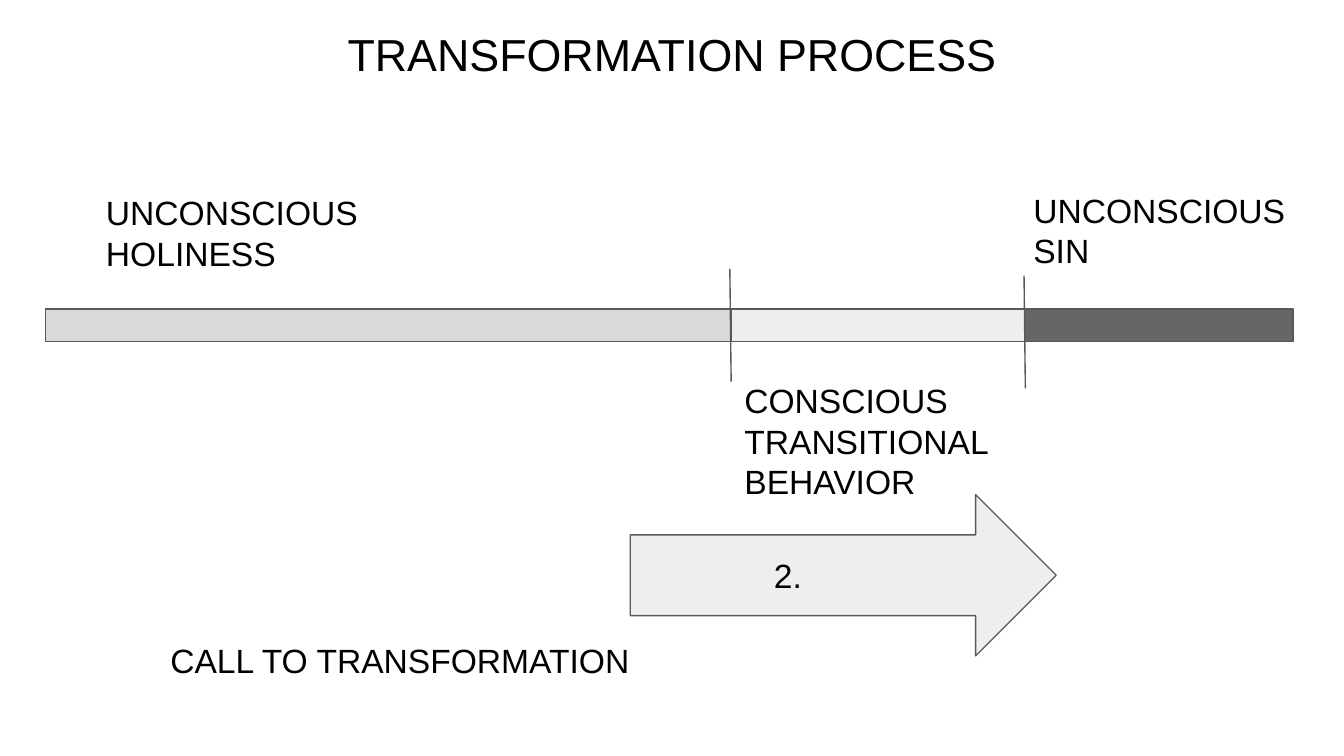
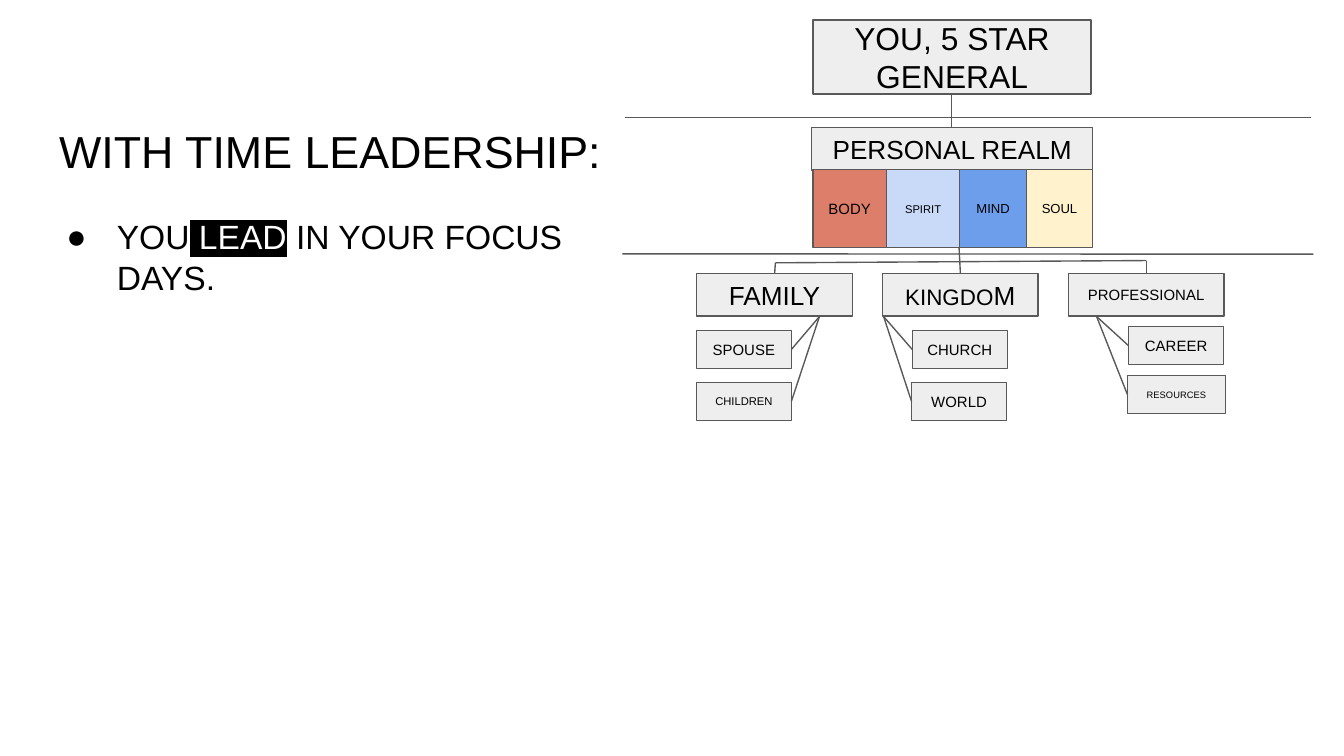
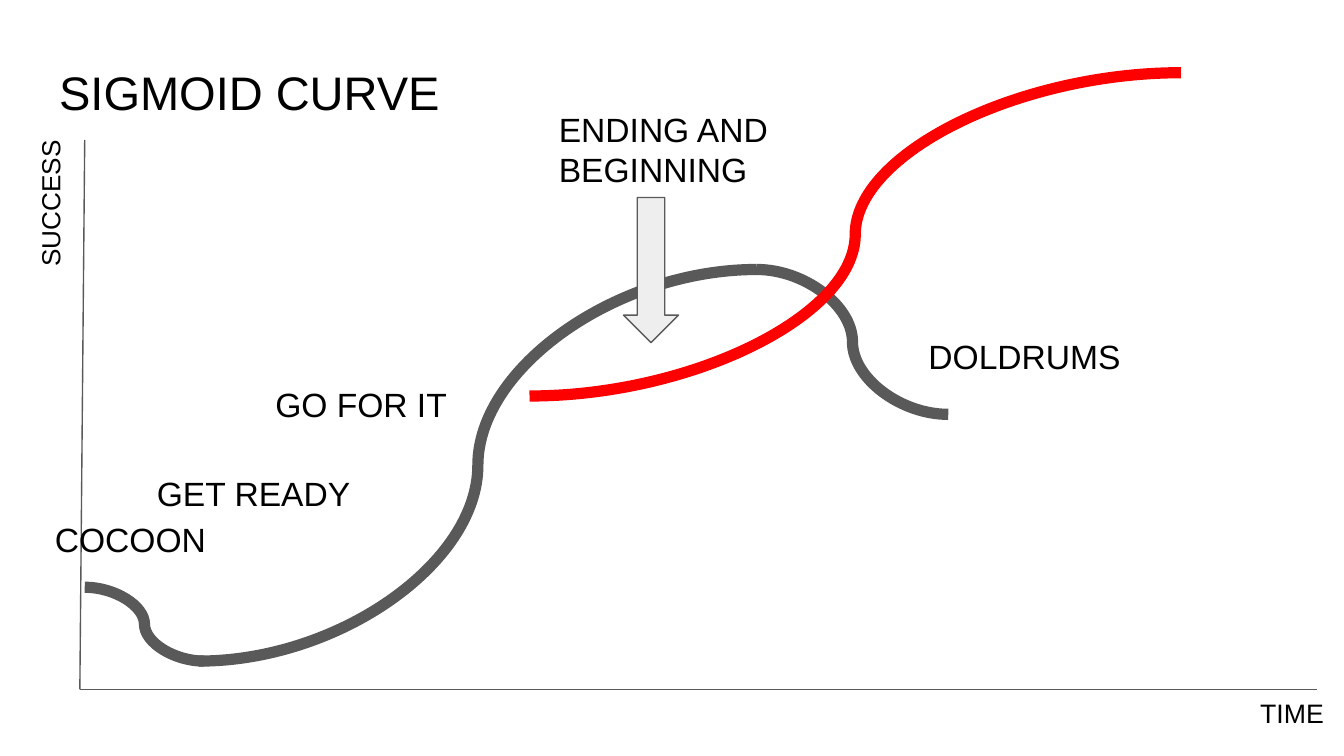
from lxml.etree import SubElement
from pptx import Presentation
from pptx.dml.color import RGBColor
from pptx.enum.shapes import MSO_CONNECTOR, MSO_SHAPE
from pptx.enum.text import MSO_ANCHOR, MSO_AUTO_SIZE, PP_ALIGN
from pptx.oxml.ns import qn
from pptx.util import Pt

BLACK = RGBColor(0x00, 0x00, 0x00)
WHITE = RGBColor(0xFF, 0xFF, 0xFF)
OUTLINE = RGBColor(0x59, 0x59, 0x59)
PALE = RGBColor(0xEE, 0xEE, 0xEE)
SILVER = RGBColor(0xD9, 0xD9, 0xD9)
DARK = RGBColor(0x66, 0x66, 0x66)
RED = RGBColor(0xFF, 0x00, 0x00)
CLAY = RGBColor(0xDD, 0x7E, 0x6B)
SKY = RGBColor(0xC9, 0xDA, 0xF8)
BLUE = RGBColor(0x6D, 0x9E, 0xEB)
CREAM = RGBColor(0xFF, 0xF2, 0xCC)

FONT = "Arial"
INSET = Pt(7.2)
HAIRLINE = 0.75


class Deck:
    """Holds the shared style and the slide being drawn; lengths are points."""

    def __init__(self):
        self.prs = Presentation()
        self.prs.slide_width, self.prs.slide_height = Pt(720), Pt(405)
        self.slide = None

    def new_slide(self):
        self.slide = self.prs.slides.add_slide(self.prs.slide_layouts[0])

    def drop_body(self):
        body = self.slide.placeholders[1].element
        body.getparent().remove(body)

    def _frame(self, shape, anchor, auto_size=MSO_AUTO_SIZE.NONE):
        frame = shape.text_frame
        frame.word_wrap = True
        frame.auto_size = auto_size
        frame.vertical_anchor = anchor
        frame.margin_left = frame.margin_right = INSET
        frame.margin_top = frame.margin_bottom = INSET
        return frame

    def _write(self, frame, runs, align):
        """Each run is (text, size) or (text, size, colour, highlight)."""
        paragraph = frame.paragraphs[0]
        paragraph.alignment = align
        paragraph.space_before = Pt(0)
        for text, size, *marks in runs:
            colour, highlight = marks or (BLACK, None)
            run = paragraph.add_run()
            run.text = text
            run.font.size = Pt(size)
            run.font.name = FONT
            run.font.color.rgb = colour
            if highlight is not None:
                props = run._r.get_or_add_rPr()
                mark = SubElement(props, qn("a:highlight"))
                SubElement(mark, qn("a:srgbClr"), val=str(highlight))
                props.find(qn("a:solidFill")).addnext(mark)
        return paragraph

    def _place(self, shape, box):
        shape.left, shape.top, shape.width, shape.height = map(Pt, box)

    def title(self, text, box, size=24, align=PP_ALIGN.LEFT):
        title = self.slide.shapes.title
        self._place(title, box)
        self._write(self._frame(title, MSO_ANCHOR.BOTTOM), [(text, size)], align)

    def body(self, runs, box, align=PP_ALIGN.LEFT):
        body = self.slide.placeholders[1]
        self._place(body, box)
        return self._write(self._frame(body, MSO_ANCHOR.TOP), runs, align)

    def bullet(self, paragraph):
        props = paragraph._p.get_or_add_pPr()
        props.set("marL", str(Pt(36)))
        props.set("indent", str(Pt(-27)))
        colour = SubElement(props, qn("a:buClr"))
        SubElement(colour, qn("a:srgbClr"), val=str(BLACK))
        SubElement(props, qn("a:buFont"), typeface=FONT)
        SubElement(props, qn("a:buChar"), char="●")

    def label(self, text, box, size=18, align=PP_ALIGN.LEFT, rotation=0):
        label = self.slide.shapes.add_textbox(*map(Pt, box))
        label.rotation = rotation
        frame = self._frame(label, MSO_ANCHOR.TOP, MSO_AUTO_SIZE.SHAPE_TO_FIT_TEXT)
        self._write(frame, [(text, size)], align)

    def block(self, box, runs=(), fill=PALE, kind=MSO_SHAPE.RECTANGLE):
        block = self.slide.shapes.add_shape(kind, *map(Pt, box))
        block.shadow.inherit = False
        block.fill.solid()
        block.fill.fore_color.rgb = fill
        block.line.color.rgb = OUTLINE
        block.line.width = Pt(HAIRLINE)
        if runs:
            frame = self._frame(block, MSO_ANCHOR.MIDDLE)
            self._write(frame, runs, PP_ALIGN.CENTER)

    def line(self, start, end, colour=OUTLINE, width=HAIRLINE,
             kind=MSO_CONNECTOR.STRAIGHT):
        line = self.slide.shapes.add_connector(kind, *map(Pt, start + end))
        line.line.color.rgb = colour
        line.line.width = Pt(width)
        SubElement(line._element.spPr, qn("a:effectLst"))

    def curve(self, start, end, colour=OUTLINE):
        self.line(start, end, colour, 6, MSO_CONNECTOR.CURVE)


def transformation_slide(deck):
    deck.new_slide()
    deck.drop_body()
    deck.title("TRANSFORMATION PROCESS", (24.5, 14.4, 671, 36),
               align=PP_ALIGN.CENTER)

    # Call to transformation
    deck.block((337.7, 265, 228.2, 86.4), kind=MSO_SHAPE.RIGHT_ARROW)
    deck.label("2.", (407.5, 290.2, 312.5, 36))
    deck.label("CALL TO TRANSFORMATION", (84.2, 335.5, 352, 36))

    # Bar of three stages
    left = 24.5
    for width, fill in ((367.2, SILVER), (157, PALE), (144, DARK)):
        deck.block((left, 165.6, width, 17.3), fill=fill)
        left += width

    # Stage names and dividers
    deck.label("UNCONSCIOUS HOLINESS", (49.7, 95.8, 173.5, 58.3))
    deck.label("UNCONSCIOUS SIN", (546.5, 94.3, 173.5, 58.3))
    deck.label("CONSCIOUS TRANSITIONAL BEHAVIOR", (391.7, 196.6, 157, 80))
    for x, top in ((391, 144), (548.6, 147.6)):
        deck.line((x, top), (x + 0.7, top + 60.5))


def leadership_slide(deck):
    deck.new_slide()
    deck.title("WITH TIME LEADERSHIP:", (24.5, 58.3, 671, 43.9))
    focus = deck.body([("YOU", 18), (" LEAD", 18, WHITE, BLACK),
                       (" IN YOUR FOCUS DAYS.", 18)],
                      (19.4, 108.7, 337.7, 271.4))
    deck.bullet(focus)

    # General and personal realm
    deck.block((435.6, 10.8, 149, 39.6), [("YOU, 5 STAR GENERAL", 17)])
    deck.block((434.9, 68.4, 150.5, 23), [("PERSONAL REALM", 14)])
    left = 435.6
    for part, size, width, fill in (("BODY", 8, 39.3, CLAY),
                                    ("SPIRIT", 6, 39.3, SKY),
                                    ("MIND", 7, 35.6, BLUE),
                                    ("SOUL", 7, 35.6, CREAM)):
        deck.block((left, 90.9, width, 41.8), [(part, size)], fill)
        left += width

    # Domains: heading, joint of the links, members (text, size, left, top, width)
    domains = (
        ([("FAMILY", 14)], 439,
         (("SPOUSE", 8, 373, 177, 51), ("CHILDREN", 6, 373, 204.8, 51))),
        ([("KINGDO", 12), ("M", 14)], 473.4,
         (("CHURCH", 8, 488.7, 177, 51), ("WORLD", 8, 488.3, 204.8, 51))),
        ([("PROFESSIONAL", 8)], 587.5,
         (("CAREER", 8, 604.6, 175, 51), ("RESOURCES", 5, 604, 201.2, 52.6))),
    )
    for column, (heading, joint, members) in enumerate(domains):
        deck.block((373.2 + 99.6 * column, 146.4, 83.4, 23), heading)
        for text, size, left, top, width in members:
            deck.block((left, top, width, 20.4), [(text, size)])
            near_side = left if joint < left else left + width
            deck.line((joint, 169.6), (near_side, top + 10.2))

    # Links between the levels
    deck.line((509.8, 50.4), (509.8, 68.4))
    deck.line((415.4, 140.8), (614.2, 139.6))
    deck.line((513.8, 132.7), (514.5, 146.4))
    deck.line((614.2, 139.6), (614.2, 146.4))
    deck.line((415.4, 140.8), (415, 146.4))

    # Level separators
    deck.line((334.8, 62.9), (702.5, 62.9))
    deck.line((333.4, 136), (703.6, 136.2))


def sigmoid_slide(deck):
    deck.new_slide()
    deck.title("SIGMOID CURVE", (24.5, 25.9, 245.5, 45.4), size=25.2)

    # Axes and their names
    time = deck.body([("TIME", 14.3)], (45.4, 369.4, 671, 28), PP_ALIGN.RIGHT)
    time.line_spacing = 0.8
    deck.label("SUCCESS", (-149, 228.2, 352, 31.7), 14, PP_ALIGN.RIGHT, 270)
    origin = (42.8, 369.4)
    deck.line((45.4, 74.9), origin)
    deck.line(origin, (705.6, 369.4))

    # First curve, then the new one
    peak = (405.4, 144.4)
    deck.curve((45.4, 314.6), (109.4, 354.2))
    deck.curve((106.6, 354.2), peak)
    deck.curve(peak, (508, 222))
    deck.curve((283.7, 212.2), (632.7, 39), RED)

    # Phases
    for phase, box in (("COCOON", (22.3, 270.7, 103, 36)),
                       ("GET READY", (77, 246.2, 120.2, 36)),
                       ("GO FOR IT", (140.4, 198.7, 120.2, 36)),
                       ("ENDING AND BEGINNING", (292.3, 51.1, 141.8, 58.3)),
                       ("DOLDRUMS", (490.3, 172.8, 126.7, 36))):
        deck.label(phase, box)
    deck.block((334, 105.8, 29.5, 77.8), kind=MSO_SHAPE.DOWN_ARROW)


def main():
    deck = Deck()
    transformation_slide(deck)
    leadership_slide(deck)
    sigmoid_slide(deck)
    deck.prs.save("out.pptx")


if __name__ == "__main__":
    main()
